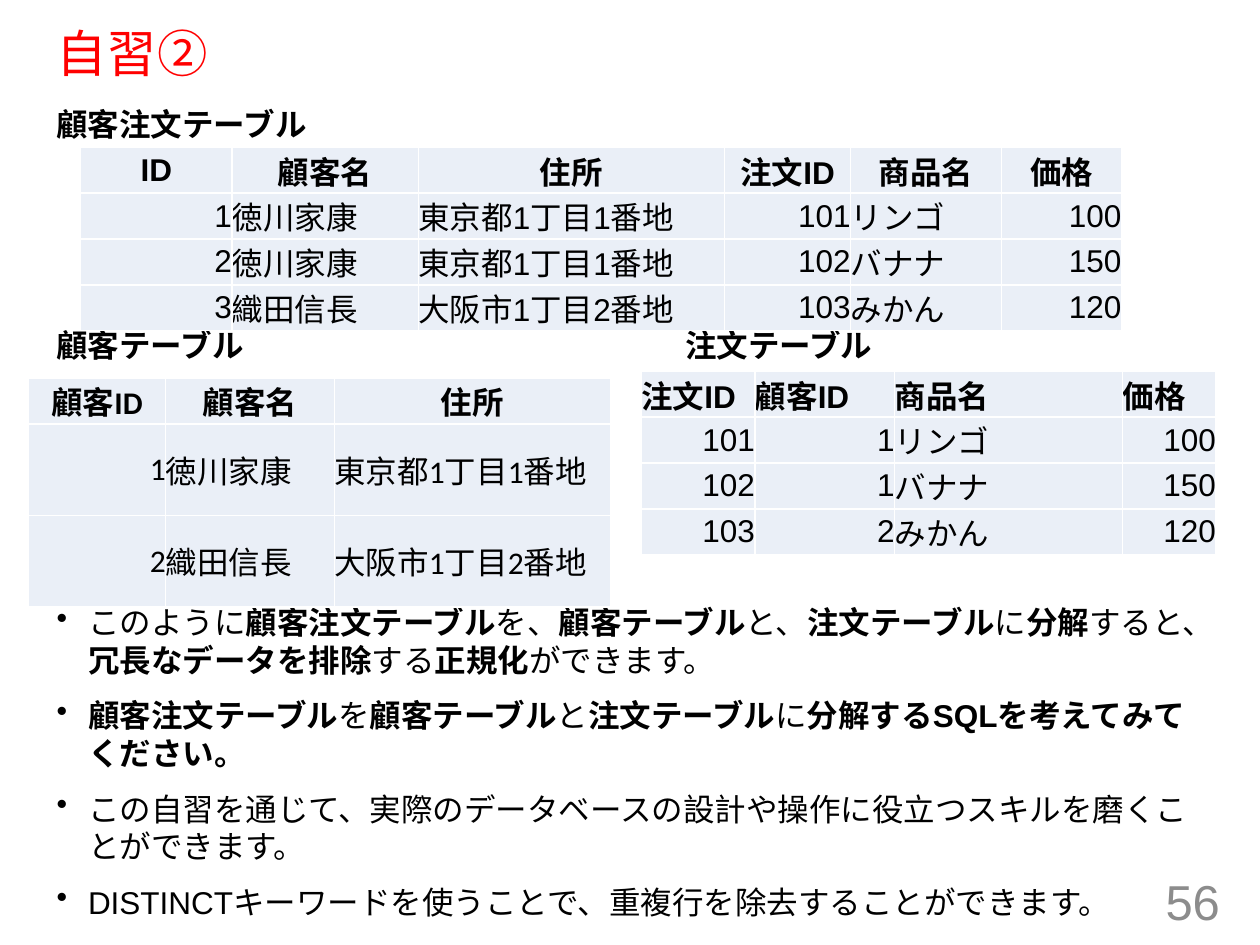
from lxml.etree import SubElement
from pptx import Presentation
from pptx.dml.color import RGBColor
from pptx.enum.text import MSO_ANCHOR, PP_ALIGN
from pptx.oxml.ns import qn
from pptx.util import Inches, Pt

WIDE, HIGH = 10, 7.5
LEFT, MID, RIGHT = PP_ALIGN.LEFT, PP_ALIGN.CENTER, PP_ALIGN.RIGHT

ORDERS = [
    ["ID", "顧客名", "住所", "注文ID", "商品名", "価格"],
    ["1", "徳川家康", "東京都1丁目1番地", "101", "リンゴ", "100"],
    ["2", "徳川家康", "東京都1丁目1番地", "102", "バナナ", "150"],
    ["3", "織田信長", "大阪市1丁目2番地", "103", "みかん", "120"],
]
CLIENTS = [
    ["顧客ID", "顧客名", "住所"],
    ["1", "徳川家康", "東京都1丁目1番地"],
    ["2", "織田信長", "大阪市1丁目2番地"],
]
ITEMS = [
    ["注文ID", "顧客ID", "商品名", "価格"],
    ["101", "1", "リンゴ", "100"],
    ["102", "1", "バナナ", "150"],
    ["103", "2", "みかん", "120"],
]
NOTES = [
    "このように*顧客注文テーブル*を、*顧客テーブル*と、*注文テーブル*に*分解*すると、"
    "*冗長なデータを排除*する*正規化*ができます。",
    "*顧客注文テーブル*を*顧客テーブル*と*注文テーブル*に*分解するSQLを考えてみてください。*",
    "この自習を通じて、実際のデータベースの設計や操作に役立つスキルを磨くことができます。",
    "DISTINCTキーワードを使うことで、重複行を除去することができます。",
]


def color(code):
    return RGBColor.from_string(code)


def across(share):
    return Inches(WIDE * share / 100)


def down(share):
    return Inches(HIGH * share / 100)


def style(para, size=18, ink="000000", bold=None, face="Arial", align=LEFT):
    font = para.font
    font.size, font.name, font.bold = Pt(size), face, bold
    font.color.rgb = color(ink)
    para.alignment = align


def add_box(slide, x, y, w, h, anchor=MSO_ANCHOR.TOP):
    box = slide.shapes.add_textbox(across(x), down(y), across(w), down(h))
    frame = box.text_frame
    frame.word_wrap = True
    frame.margin_top = frame.margin_bottom = 0
    frame.vertical_anchor = anchor
    return frame


def add_label(slide, text, x, y, w, h, **look):
    frame = add_box(slide, x, y, w, h, MSO_ANCHOR.MIDDLE)
    para = frame.paragraphs[0]
    para.text = text
    para.line_spacing = 0.9
    style(para, **look)


def add_notes(slide, notes, x, y, w, h):
    frame = add_box(slide, x, y, w, h)
    for num, note in enumerate(notes):
        para = frame.add_paragraph() if num else frame.paragraphs[0]
        style(para)
        para.space_after = Pt(10)
        for odd, part in enumerate(note.split("*")):
            if part:
                run = para.add_run()
                run.text = part
                run.font.bold = odd % 2 == 1
        props = para._p.get_or_add_pPr()
        props.set("marL", str(Inches(0.25)))
        props.set("indent", str(Inches(-0.25)))
        mark = props.makeelement(qn("a:buChar"), {"char": "•"})
        props.find(qn("a:defRPr")).addprevious(mark)


def add_edges(cell):
    props = cell._tc.get_or_add_tcPr()
    for spot, side in enumerate(("lnL", "lnR", "lnT", "lnB")):
        line = props.makeelement(qn("a:" + side), {"w": str(Pt(1))})
        fill = SubElement(line, qn("a:solidFill"))
        SubElement(fill, qn("a:srgbClr"), val="FFFFFF")
        props.insert(spot, line)


def add_grid(slide, data, x, y, cols, rows, face="Arial", head=MID):
    shape = slide.shapes.add_table(
        len(rows), len(cols), across(x), down(y),
        across(sum(cols)), down(sum(rows)))
    table = shape.table
    for col, share in zip(table.columns, cols):
        col.width = across(share)
    for row, share in zip(table.rows, rows):
        row.height = down(share)
    for r, texts in enumerate(data):
        for c, text in enumerate(texts):
            cell = table.cell(r, c)
            cell.text = text
            cell.margin_left = cell.margin_right = 0
            cell.margin_top = cell.margin_bottom = 0
            cell.vertical_anchor = MSO_ANCHOR.MIDDLE
            cell.fill.solid()
            cell.fill.fore_color.rgb = color("EAEFF7")
            add_edges(cell)
            align = head if r == 0 else RIGHT if text.isdigit() else LEFT
            style(cell.text_frame.paragraphs[0], bold=r == 0, face=face, align=align)


def main():
    deck = Presentation()
    deck.slide_width, deck.slide_height = Inches(WIDE), Inches(HIGH)
    slide = deck.slides.add_slide(deck.slide_layouts[6])
    add_label(slide, "自習②", 3.5, 2.5, 92.5, 6.8, size=28.8, ink="FF0000")
    for text, x, y in (("顧客注文テーブル", 3.5, 11.4),
                       ("顧客テーブル", 3.5, 34.8),
                       ("注文テーブル", 53.4, 34.8)):
        add_label(slide, text, x, y, 40, 4, bold=True)
    add_notes(slide, NOTES, 3.5, 63.85, 92.5, 36)
    add_label(slide, "56", 75.3, 93.1, 22.5, 5.3, size=28, ink="8C8C8C", align=RIGHT)
    row = 4.85
    add_grid(slide, ORDERS, 6.4, 15.6, (12, 14.8, 24.3, 10, 12, 9.5), [row] * 4)
    add_grid(slide, CLIENTS, 2.25, 40, (10.9, 13.4, 21.9),
             [row, 2 * row, 2 * row], face="Calibri")
    add_grid(slide, ITEMS, 50.9, 39.3, (9, 11.1, 18.1, 7.4), [row] * 4, head=LEFT)
    deck.save("out.pptx")


if __name__ == "__main__":
    main()
